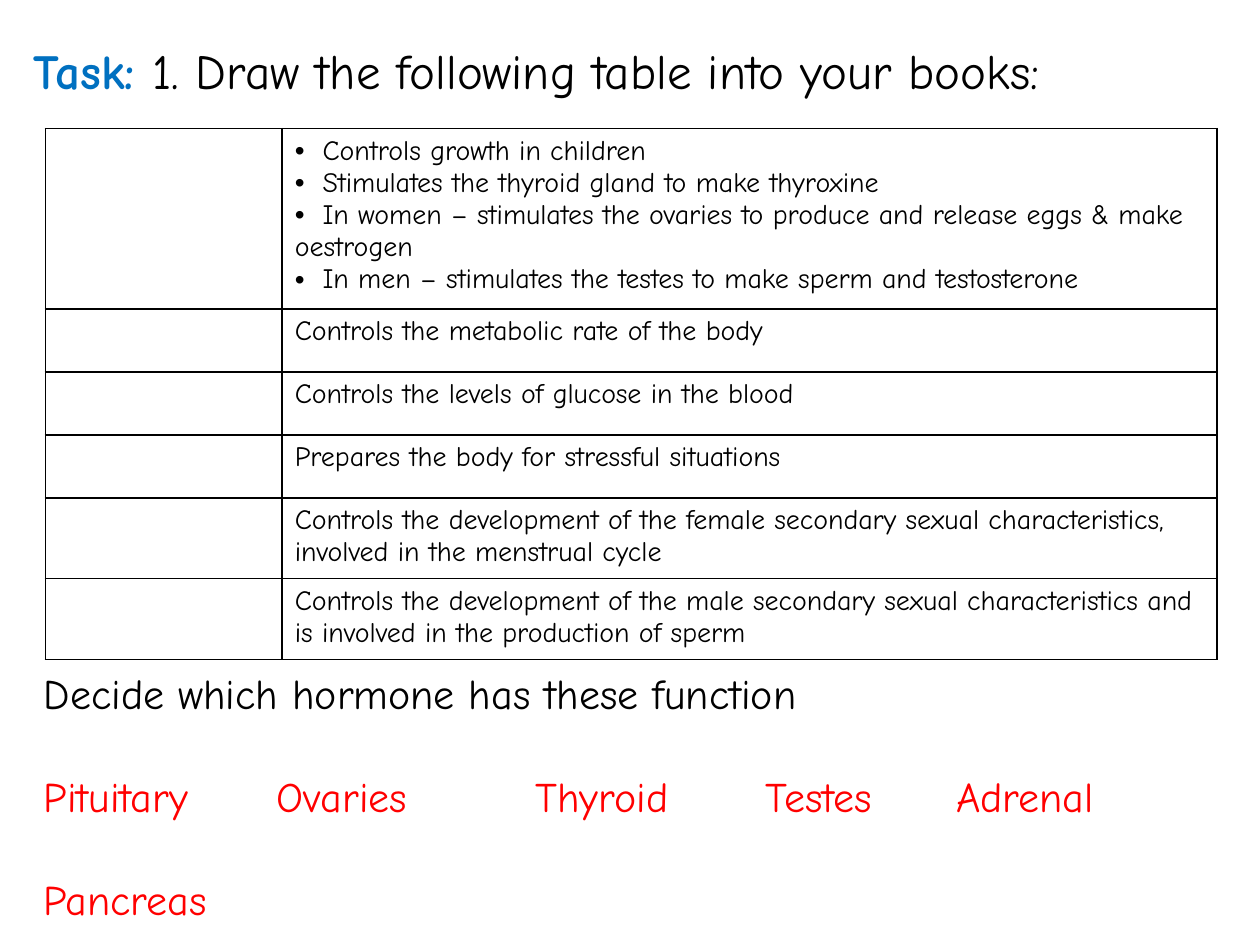
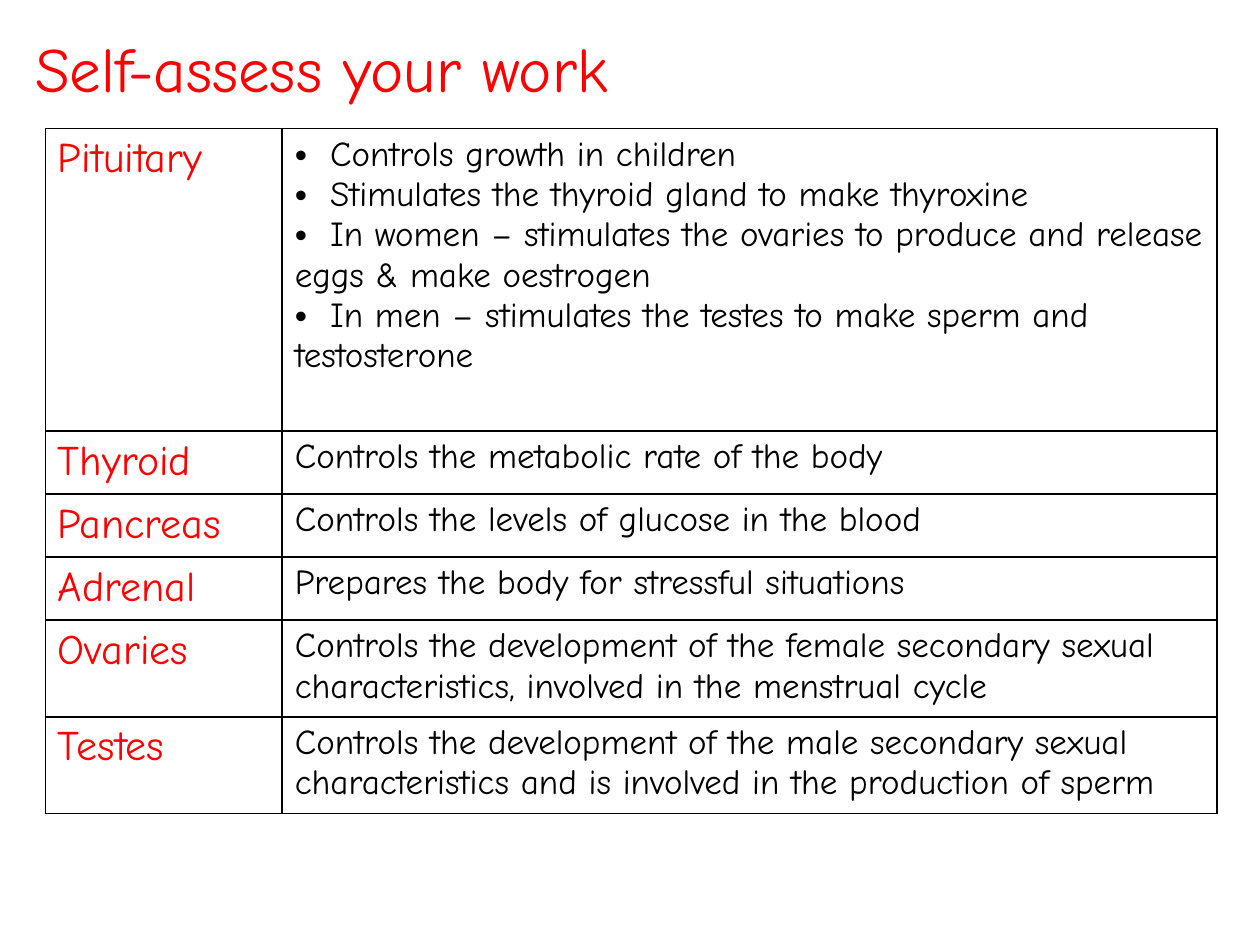
"""Build a two-slide lesson on hormone functions: a task table and its answers."""
from lxml.etree import SubElement
from pptx import Presentation
from pptx.dml.color import RGBColor
from pptx.oxml.ns import qn
from pptx.util import Emu, Inches, Pt

COLOURS = {"ink": "000000", "answer": "FF0000", "label": "0070C0", "paper": "FFFFFF"}
FONT = "Comic Neue"

FUNCTIONS = [
    ("Pituitary", ["Controls growth in children",
                   "Stimulates the thyroid gland to make thyroxine",
                   "In women – stimulates the ovaries to produce and release eggs & make oestrogen",
                   "In men – stimulates the testes to make sperm and testosterone"]),
    ("Thyroid", ["Controls the metabolic rate of the body"]),
    ("Pancreas", ["Controls the levels of glucose in the blood"]),
    ("Adrenal", ["Prepares the body for stressful situations"]),
    ("Ovaries", ["Controls the development of the female secondary sexual characteristics, "
                 "involved in the menstrual cycle"]),
    ("Testes", ["Controls the development of the male secondary sexual characteristics and "
                "is involved in the production of sperm"]),
]
TASK = [("Task: ", "label", True), ("1. Draw the following table into your books:", "ink", False)]
QUESTION = "Decide which hormone has these function"
WORD_BANK = [["Pituitary", "Ovaries", "Thyroid", "Testes", "Adrenal"], ["Pancreas"]]
WORD_STOPS = [1.85, 3.9, 5.73, 7.24]
SELF_ASSESS = "Self-assess your work"

TABLE_LEFT, TABLE_TOP = 0.36, 1.02
COLUMNS = [1.88, 7.42]
TASK_ROWS = [1.43, 0.5, 0.5, 0.5, 0.64, 0.64]
ANSWER_ROWS = [2.4, 0.5, 0.49, 0.48, 0.75, 0.74]


def rgb(name):
    return RGBColor.from_string(COLOURS[name])


def add_run(paragraph, text, size, colour="ink", bold=False):
    run = paragraph.add_run()
    run.text = text
    run.font.name, run.font.size, run.font.bold = FONT, Pt(size), bold
    run.font.color.rgb = rgb(colour)


def add_stops(paragraph, stops):
    tabs = SubElement(paragraph._p.get_or_add_pPr(), qn("a:tabLst"))
    for stop in stops:
        SubElement(tabs, qn("a:tab"), pos=str(Inches(stop)), algn="l")


def add_bullet(paragraph, gap):
    properties = paragraph._p.get_or_add_pPr()
    properties.set("marL", "0")
    properties.set("indent", "0")
    SubElement(properties, qn("a:buFont"), typeface="Arial")
    SubElement(properties, qn("a:buChar"), char="•")
    add_stops(paragraph, [gap])


def add_text_area(slide, left, top, width, height):
    area = slide.shapes.add_textbox(*map(Inches, (left, top, width, height))).text_frame
    area.word_wrap = True
    return area


def rule_cell(cell):
    cell.fill.solid()
    cell.fill.fore_color.rgb = rgb("paper")
    properties = cell._tc.get_or_add_tcPr()
    for place, side in enumerate(("lnL", "lnR", "lnT", "lnB")):
        border = SubElement(properties, qn(f"a:{side}"), w=str(Pt(1)))
        SubElement(SubElement(border, qn("a:solidFill")), qn("a:srgbClr"), val=COLOURS["ink"])
        properties.insert(place, border)


def add_function_table(slide, row_heights, size, gap, answers):
    table = slide.shapes.add_table(
        len(FUNCTIONS), len(COLUMNS), Inches(TABLE_LEFT), Inches(TABLE_TOP),
        Inches(sum(COLUMNS)), Inches(sum(row_heights))).table
    table.first_row = table.horz_banding = False
    for column, width in zip(table.columns, COLUMNS):
        column.width = Inches(width)
    for row, height, (gland, roles) in zip(table.rows, row_heights, FUNCTIONS):
        row.height = Emu(Inches(height))
        gland_cell, role_cell = row.cells
        rule_cell(gland_cell)
        rule_cell(role_cell)
        if answers:
            add_run(gland_cell.text_frame.paragraphs[0], gland, 24, "answer")
        listed = len(roles) > 1
        for place, role in enumerate(roles):
            frame = role_cell.text_frame
            paragraph = frame.add_paragraph() if place else frame.paragraphs[0]
            if listed:
                add_bullet(paragraph, gap)
            add_run(paragraph, "\t" + role if listed else role, size)


def build_task(slide):
    heading = add_text_area(slide, 0.17, 0.27, 9.63, 0.57).paragraphs[0]
    for text, colour, bold in TASK:
        add_run(heading, text, 28, colour, bold)
    add_function_table(slide, TASK_ROWS, 16, 0.22, answers=False)
    prompt = add_text_area(slide, 0.25, 5.25, 9.5, 2.12)
    add_run(prompt.paragraphs[0], QUESTION, 24)
    for words in WORD_BANK:
        line = prompt.add_paragraph()
        line.space_before = Pt(30)
        add_stops(line, WORD_STOPS)
        add_run(line, "\t".join(words), 24, "answer")


def build_answers(slide):
    heading = add_text_area(slide, 0.18, 0.25, 6.68, 0.86).paragraphs[0]
    heading.line_spacing = 0.9
    add_run(heading, SELF_ASSESS, 36, "answer")
    add_function_table(slide, ANSWER_ROWS, 20, 0.28, answers=True)


def main():
    deck = Presentation()
    deck.slide_width, deck.slide_height = Inches(10), Inches(7.5)
    for build in (build_task, build_answers):
        build(deck.slides.add_slide(deck.slide_layouts[6]))
    deck.save("out.pptx")


if __name__ == "__main__":
    main()
